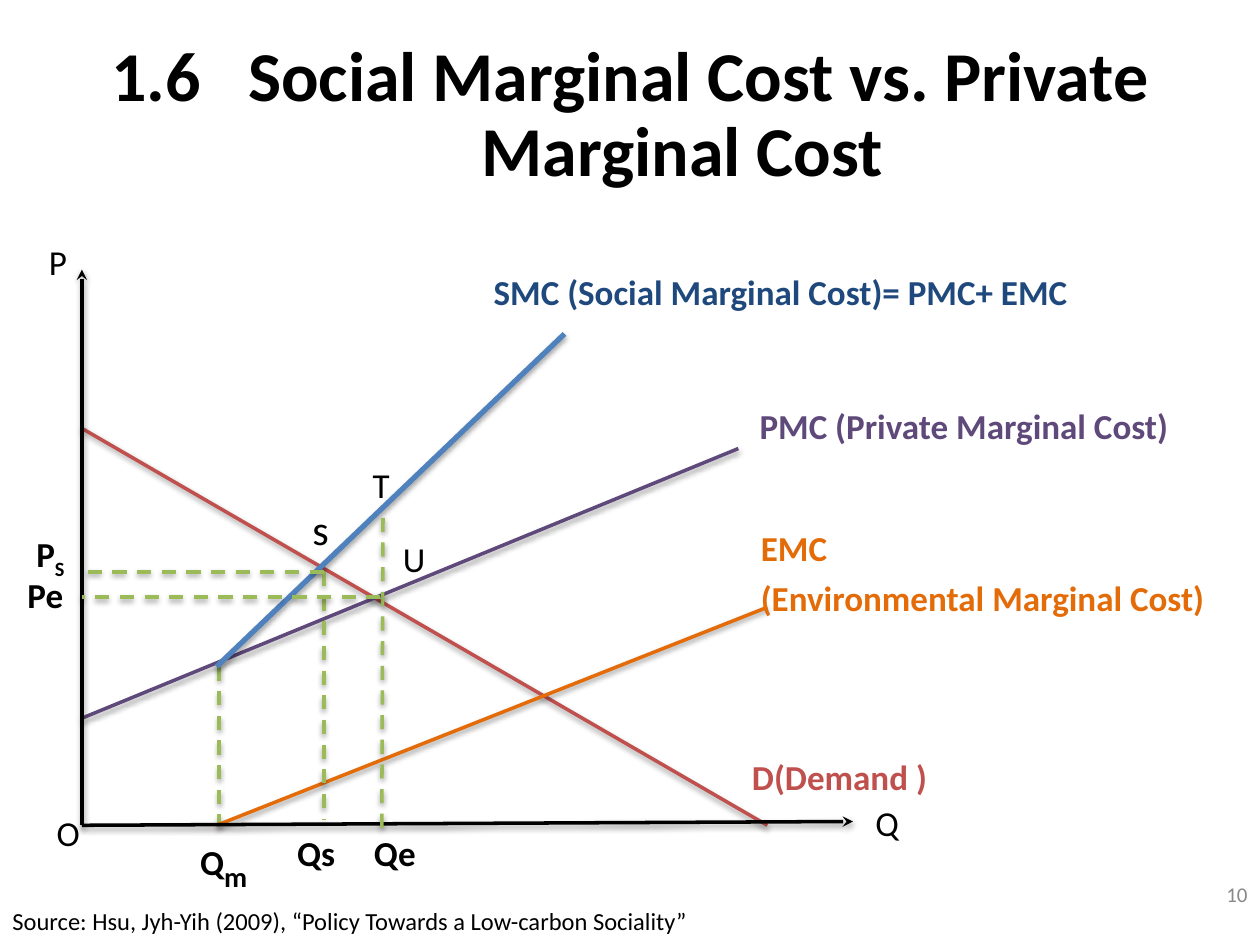
"""Build the slide comparing social and private marginal cost curves."""
from dataclasses import dataclass
from typing import NamedTuple

from lxml.etree import SubElement
from pptx import Presentation
from pptx.dml.color import RGBColor
from pptx.enum.dml import MSO_LINE
from pptx.enum.shapes import MSO_CONNECTOR
from pptx.enum.text import MSO_ANCHOR, MSO_AUTO_SIZE, PP_ALIGN
from pptx.oxml.ns import qn
from pptx.util import Inches, Pt


@dataclass(frozen=True)
class Theme:
    font: str = "Calibri"
    black: str = "000000"
    grey: str = "888888"
    demand: str = "C0504D"
    private: str = "5F497A"
    social: str = "4F81BD"
    social_text: str = "1F497D"
    external: str = "E36C09"
    guide: str = "9BBB59"
    title: int = 40
    letter: int = 24
    label: int = 20
    source: int = 14
    number: int = 12


THEME = Theme()


class Span(NamedTuple):
    text: str
    size: int = THEME.label
    subscript: bool = False
    spacing: int = 0


class Label(NamedTuple):
    left: float
    top: float
    width: float
    paragraphs: list[list[Span]]
    color: str = THEME.black
    bold: bool = False
    height: float = 0.44
    line_spacing: float = 1.0
    align: PP_ALIGN = PP_ALIGN.LEFT
    anchor: MSO_ANCHOR = MSO_ANCHOR.TOP


class Line(NamedTuple):
    start: tuple[float, float]
    end: tuple[float, float]
    color: str
    width: int = 2
    dashed: bool = False
    arrow: bool = False


AXIS_X, BASE_Y = 0.65, 6.55
QM_X, QS_X, QE_X = 1.74, 2.57, 3.03
PS_Y, PE_Y = 4.54, 4.74
ORIGIN = (AXIS_X, BASE_Y)

LINES = [
    Line((QM_X, 5.29), (QM_X, BASE_Y), THEME.guide, dashed=True),
    Line((AXIS_X, 3.4), (6.09, BASE_Y), THEME.demand),
    Line((AXIS_X, 5.7), (5.86, 3.56), THEME.private),
    Line((1.72, 5.29), (4.48, 2.65), THEME.social, width=3),
    Line((1.72, BASE_Y), (6.09, 4.82), THEME.external),
    Line(ORIGIN, (AXIS_X, 2.14), THEME.black, arrow=True),
    Line(ORIGIN, (6.77, 6.52), THEME.black, arrow=True),
    Line((QS_X, PS_Y), (QS_X, 6.51), THEME.guide, dashed=True),
    Line((3.04, 4.11), (QE_X, 6.58), THEME.guide, dashed=True),
    Line((3.02, PE_Y), (AXIS_X, PE_Y), THEME.guide, dashed=True),
    Line((QS_X, PS_Y), (AXIS_X, PS_Y), THEME.guide, dashed=True),
]

LABELS = [
    Label(1.49, 6.51, 0.77, [[Span("Q"), Span("m", 28, True)]], bold=True),
    Label(2.26, 6.55, 0.6, [[Span("Qs")]], bold=True),
    Label(2.87, 6.55, 0.6, [[Span("Qe")]], bold=True),
    Label(0.19, 4.18, 0.46, [[Span("P"), Span("S", subscript=True)]], bold=True),
    Label(0.12, 4.5, 0.54, [[Span("Pe")]], bold=True),
    Label(2.38, 3.95, 0.42, [[Span("s", THEME.letter)]], height=0.51),
    Label(2.86, 3.63, 0.47, [[Span("T")]]),
    Label(3.1, 4.22, 0.4, [[Span("U")]]),
    Label(0.35, 6.39, 0.38, [[Span("O")]]),
    Label(6.85, 6.31, 0.4, [[Span("Q")]]),
    Label(0.29, 1.86, 0.46, [[Span("P")]]),
    Label(5.87, 5.95, 1.77, [[Span("D(Demand )")]], THEME.demand, True),
    Label(5.94, 4.06, 3.76, [[Span("EMC")], [Span("(Environmental Marginal Cost)")]],
          THEME.external, True, 0.77, 1.2),
    Label(5.93, 3.16, 3.63, [[Span("PMC (Private Marginal Cost)")]], THEME.private, True),
    Label(3.82, 2.1, 5.43, [[Span("SMC (Social Marginal Cost)= PMC+ EMC")]],
          THEME.social_text, True),
    Label(0, 7.14, 8.58,
          [[Span("Source: Hsu, Jyh-Yih (2009), “Policy Towards a Low-carbon Sociality”",
                 THEME.source)]], height=0.34),
    Label(9.49, 6.9, 0.51, [[Span("10", THEME.number)]], THEME.grey, height=0.4,
          align=PP_ALIGN.RIGHT, anchor=MSO_ANCHOR.MIDDLE),
]

TITLE = Label(0, 0.3, 10,
              [[Span("1.6", THEME.title), Span(" ", THEME.title, spacing=18),
                Span("Social Marginal Cost vs. Private Marginal Cost", THEME.title)]],
              bold=True, height=1.25, line_spacing=0.9,
              align=PP_ALIGN.CENTER, anchor=MSO_ANCHOR.MIDDLE)


def add_span(para, span: Span, label: Label) -> None:
    run = para.add_run()
    run.text = span.text
    run.font.name = THEME.font
    run.font.size = Pt(span.size)
    run.font.bold = label.bold
    run.font.color.rgb = RGBColor.from_string(label.color)
    properties = run.font._element
    if span.subscript:
        properties.set("baseline", "-25000")
    if span.spacing:
        properties.set("spc", str(span.spacing * 100))


def fill_text(box, label: Label) -> None:
    frame = box.text_frame
    frame.word_wrap = True
    frame.auto_size = MSO_AUTO_SIZE.NONE
    frame.vertical_anchor = label.anchor
    for index, spans in enumerate(label.paragraphs):
        para = frame.add_paragraph() if index else frame.paragraphs[0]
        para.alignment = label.align
        para.line_spacing = label.line_spacing
        for span in spans:
            add_span(para, span, label)


def add_label(page, label: Label) -> None:
    box = page.shapes.add_textbox(Inches(label.left), Inches(label.top),
                                  Inches(label.width), Inches(label.height))
    fill_text(box, label)


def add_title(page, label: Label) -> None:
    box = page.shapes.title
    box.left, box.top = Inches(label.left), Inches(label.top)
    box.width, box.height = Inches(label.width), Inches(label.height)
    fill_text(box, label)
    indent = Inches(0.83)
    properties = box.text_frame.paragraphs[0]._p.get_or_add_pPr()
    properties.set("marL", str(indent))
    properties.set("indent", str(-indent))


def add_shadow(connector) -> None:
    effects = SubElement(connector._element.spPr, qn("a:effectLst"))
    shadow = SubElement(effects, qn("a:outerShdw"), blurRad=str(Pt(3.1)),
                        dist=str(Pt(1.6)), dir="5400000", rotWithShape="0")
    color = SubElement(shadow, qn("a:srgbClr"), val=THEME.black)
    SubElement(color, qn("a:alpha"), val="38000")


def add_line(page, line: Line) -> None:
    points = [Inches(value) for value in (*line.start, *line.end)]
    connector = page.shapes.add_connector(MSO_CONNECTOR.STRAIGHT, *points)
    connector.line.color.rgb = RGBColor.from_string(line.color)
    connector.line.width = Pt(line.width)
    if line.dashed:
        connector.line.dash_style = MSO_LINE.DASH
    if line.arrow:
        SubElement(connector.line._get_or_add_ln(), qn("a:tailEnd"), type="stealth")
    add_shadow(connector)


def main() -> None:
    deck = Presentation()
    deck.slide_width, deck.slide_height = Inches(10), Inches(7.5)
    page = deck.slides.add_slide(deck.slide_layouts[5])
    add_title(page, TITLE)
    for line in LINES:
        add_line(page, line)
    for label in LABELS:
        add_label(page, label)
    deck.save("out.pptx")


if __name__ == "__main__":
    main()
